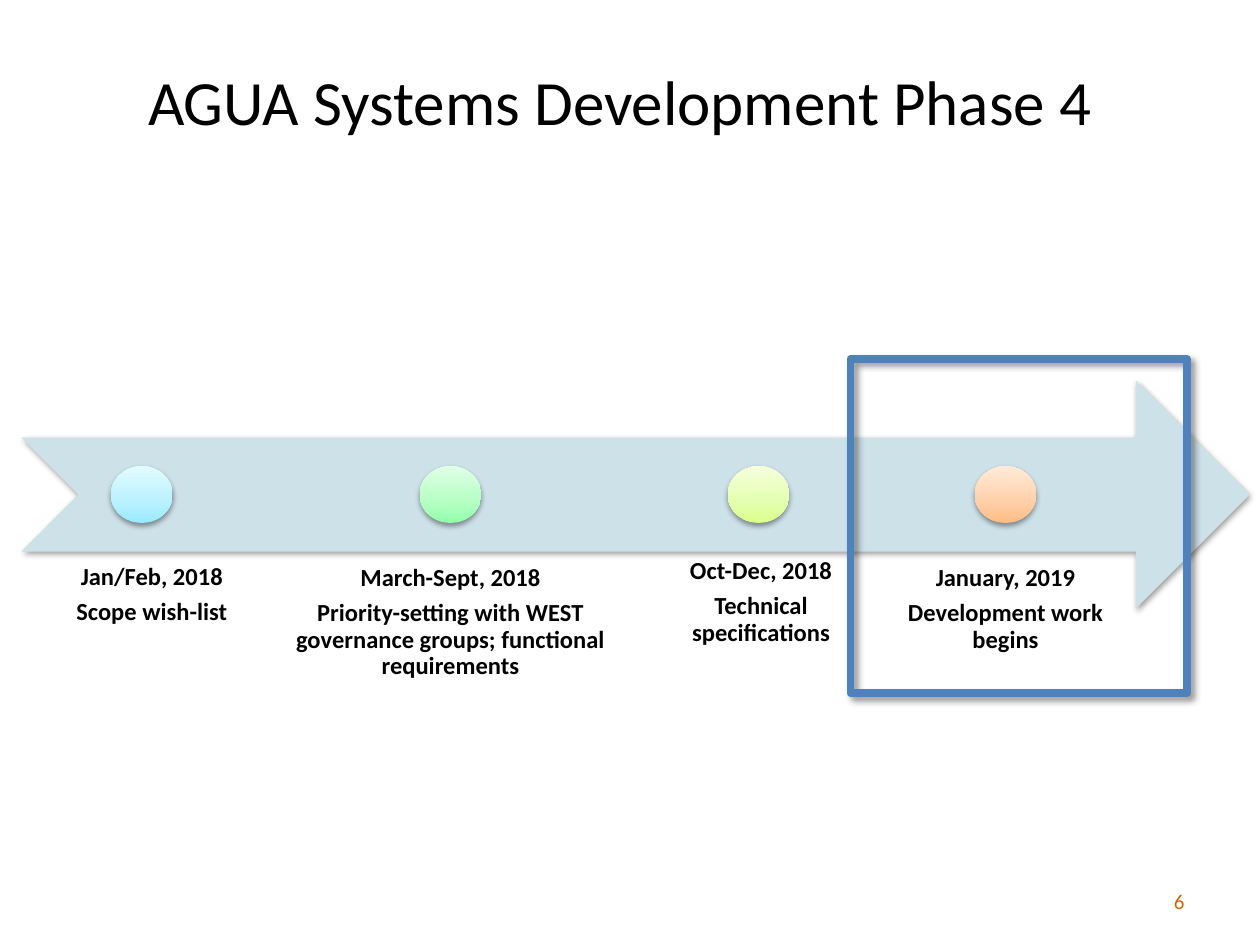
from copy import deepcopy

from lxml.etree import SubElement
from pptx import Presentation
from pptx.dml.color import RGBColor
from pptx.enum.shapes import MSO_SHAPE
from pptx.enum.text import MSO_ANCHOR, PP_ALIGN
from pptx.oxml.ns import qn
from pptx.util import Inches, Pt

COLORS = {
    "text": "000000",
    "arrow": "CDE1E8",
    "highlight": "4F81BD",
    "number": "D56509",
    "shadow": "000000",
}

# Grid of 100 columns by 75 rows; boxes are (column, row, columns, rows)
CELL = Inches(0.1)
MARKER_TOP, MARKER_WIDTH, MARKER_HEIGHT = 37, 4.9, 4.5
LABEL_HEIGHT = 18.1

# Marker centre, label left, top and width, anchor, date, task, gradient
MILESTONES = [
    (11.25, 2.5, 32.7, 19.1, MSO_ANCHOR.BOTTOM, "Jan/Feb, 2018",
     "Scope wish-list", ("99EAFF", "B8F1FF", "E2FBFF")),
    (35.75, 21.3, 43.8, 28.9, MSO_ANCHOR.TOP, "March-Sept, 2018",
     "Priority-setting with WEST governance groups; functional requirements",
     ("92FFAA", "B3FFC2", "E0FFE7")),
    (60.2, 50.8, 34.3, 19.2, MSO_ANCHOR.BOTTOM, "Oct-Dec, 2018",
     "Technical specifications", ("DCFF8A", "E3FFAE", "F5FFDC")),
    (79.8, 70.2, 43.8, 19.2, MSO_ANCHOR.TOP, "January, 2019",
     "Development work begins", ("FFBB82", "FFCFA8", "FFEBD9")),
]

prs = Presentation()
prs.slide_width, prs.slide_height = 100 * CELL, 75 * CELL
slide = prs.slides.add_slide(prs.slide_layouts[6])


def add_text(box, lines, size, color, align, anchor, bold=False, inset=None):
    frame = slide.shapes.add_textbox(*(int(n * CELL) for n in box)).text_frame
    frame.word_wrap = True
    frame.vertical_anchor = anchor
    if inset is not None:
        frame.margin_left = frame.margin_right = inset
        frame.margin_top = frame.margin_bottom = inset
    frame.text = "\n".join(lines)
    for paragraph in frame.paragraphs:
        paragraph.alignment = align
        font = paragraph.runs[0].font
        font.name, font.size, font.bold = "Calibri", Pt(size), bold
        font.color.rgb = RGBColor.from_string(COLORS[color])
    return frame


def add_shadowed(kind, box, blur=3.1, distance=1.6, angle=90, opacity=38):
    """Add a shape without outline, casting an outer shadow."""
    shape = slide.shapes.add_shape(kind, *(int(n * CELL) for n in box))
    shape.line.fill.background()
    shape.shadow.inherit = False
    effects = shape._element.spPr.find(qn("a:effectLst"))
    outer = SubElement(effects, qn("a:outerShdw"), blurRad=str(Pt(blur)),
                       dist=str(Pt(distance)), dir=str(angle * 60000),
                       rotWithShape="0")
    tint = SubElement(outer, qn("a:srgbClr"), val=COLORS["shadow"])
    SubElement(tint, qn("a:alpha"), val=str(opacity * 1000))
    return shape


add_text((4.2, 1.7, 90, 12.5), ["AGUA Systems Development Phase 4"], 36,
         "text", PP_ALIGN.CENTER, MSO_ANCHOR.MIDDLE)

timeline = add_shadowed(MSO_SHAPE.NOTCHED_RIGHT_ARROW, (1.7, 30.2, 97.5, 18.1))
timeline.fill.solid()
timeline.fill.fore_color.rgb = RGBColor.from_string(COLORS["arrow"])

for center, left, top, width, anchor, date, task, gradient in MILESTONES:
    label = add_text((left, top, width, LABEL_HEIGHT), [date, task], 14, "text",
                     PP_ALIGN.CENTER, anchor, bold=True, inset=Inches(0.11))
    for paragraph in label.paragraphs:
        paragraph.line_spacing = 0.9
    label.paragraphs[1].space_before = Pt(4.9)

    marker = add_shadowed(MSO_SHAPE.OVAL, (center - MARKER_WIDTH / 2, MARKER_TOP,
                                           MARKER_WIDTH, MARKER_HEIGHT))
    marker.fill.gradient()
    marker.fill.gradient_angle = 90
    stops = marker._element.spPr.find(qn("a:gradFill")).find(qn("a:gsLst"))
    stops.insert(1, deepcopy(stops[0]))
    for stop, position, color in zip(marker.fill.gradient_stops,
                                     (0, 0.35, 1), gradient):
        stop.position = position
        stop.color.rgb = RGBColor.from_string(color)

highlight = add_shadowed(MSO_SHAPE.RECTANGLE, (67.5, 28.5, 26.7, 26.5),
                         blur=4, distance=3, angle=45, opacity=40)
highlight.fill.background()
highlight.line.color.rgb = RGBColor.from_string(COLORS["highlight"])
highlight.line.width = Pt(4.5)

add_text((71.7, 69.5, 23.3, 4), ["6"], 12, "number", PP_ALIGN.RIGHT,
         MSO_ANCHOR.MIDDLE)

prs.save("out.pptx")
